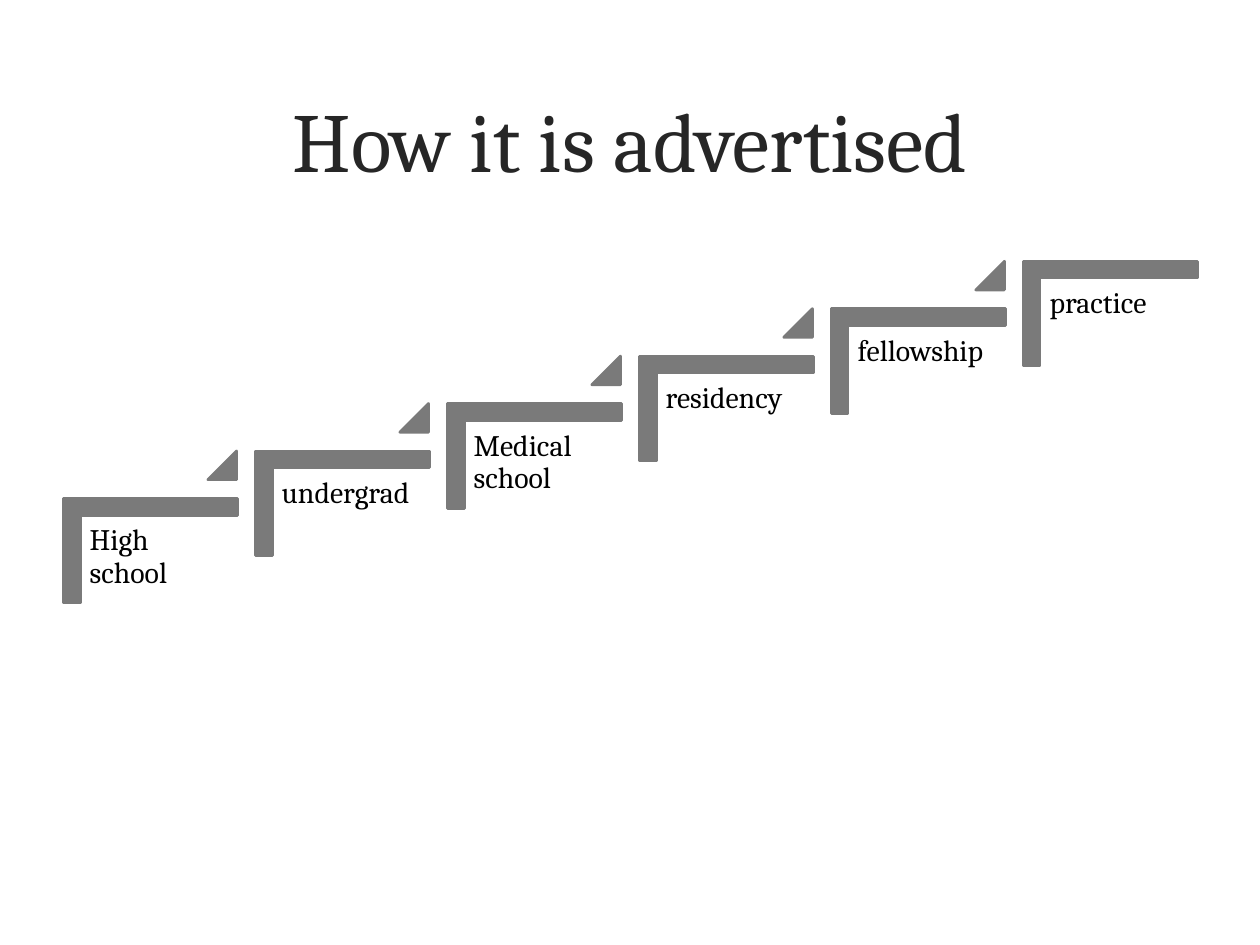
from dataclasses import dataclass

from pptx import Presentation
from pptx.dml.color import RGBColor
from pptx.enum.shapes import MSO_SHAPE
from pptx.enum.text import MSO_ANCHOR, PP_ALIGN
from pptx.util import Cm, Pt

CORNER = MSO_SHAPE.CORNER
WEDGE = MSO_SHAPE.ISOSCELES_TRIANGLE
TOP = MSO_ANCHOR.TOP
LEFT, CENTER = PP_ALIGN.LEFT, PP_ALIGN.CENTER

FACE = "Cambria"
COLORS = {"title": "262626", "label": "000000", "step": "7A7A7A"}
STAGES = ["High school", "undergrad", "Medical school",
          "residency", "fellowship", "practice"]
RUN, RISE = 3.87, 4.78 / (len(STAGES) - 1)


@dataclass
class Box:
    """Place and size in centimetres."""
    x: float
    y: float
    w: float
    h: float

    def climb(self, step: int) -> "Box":
        return Box(self.x + step * RUN, self.y - step * RISE, self.w, self.h)

    def frame(self) -> tuple:
        return Cm(self.x), Cm(self.y), Cm(self.w), Cm(self.h)


# Parts of the lowest step
TREAD = Box(1.98, 9.35, 2.11, 3.51)
LABEL = Box(1.63, 10.41, 3.15, 2.77)
MARK = Box(4.19, 9.09, 0.58, 0.58)


def apply(item, values: dict) -> None:
    for name, value in values.items():
        setattr(item, name, value)


def paint(color: str) -> RGBColor:
    return RGBColor.from_string(COLORS[color])


def write(frame, text: str, size: float, color: str, align) -> None:
    para = frame.paragraphs[0]
    para.text = text
    para.alignment = align
    apply(para.font, {"name": FACE, "size": Pt(size)})
    para.font.color.rgb = paint(color)


def draw(slide, kind, box: Box, cuts: list[float], turn: float = 0) -> None:
    shape = slide.shapes.add_shape(kind, *box.frame())
    for i, cut in enumerate(cuts):
        shape.adjustments[i] = cut
    shape.rotation = turn
    shape.shadow.inherit = False
    shape.fill.solid()
    shape.fill.fore_color.rgb = paint("step")
    shape.line.color.rgb = paint("step")
    shape.line.width = Pt(1.5)


def label(slide, box: Box, text: str) -> None:
    frame = slide.shapes.add_textbox(*box.frame()).text_frame
    sides = ("left", "top", "right", "bottom")
    apply(frame, {f"margin_{side}": Cm(0.18) for side in sides})
    apply(frame, {"word_wrap": True, "vertical_anchor": TOP})
    write(frame, text, 17, "label", LEFT)
    frame.paragraphs[0].line_spacing = 0.9


def main() -> None:
    deck = Presentation()
    apply(deck, {"slide_width": Cm(25.4), "slide_height": Cm(19.05)})
    slide = deck.slides.add_slide(deck.slide_layouts[5])

    # Title
    title = slide.shapes.title
    apply(title, dict(zip(("left", "top", "width", "height"),
                          Box(1.27, 1.65, 22.86, 3.18).frame())))
    title.text_frame.vertical_anchor = TOP
    write(title.text_frame, "How it is advertised", 48, "title", CENTER)

    # Staircase, with a wedge leading up from all but the last step
    for i, stage in enumerate(STAGES):
        draw(slide, CORNER, TREAD.climb(i), [0.16, 0.16], 90)
        label(slide, LABEL.climb(i), stage)
        if i < len(STAGES) - 1:
            draw(slide, WEDGE, MARK.climb(i), [1])

    deck.save("out.pptx")


if __name__ == "__main__":
    main()
